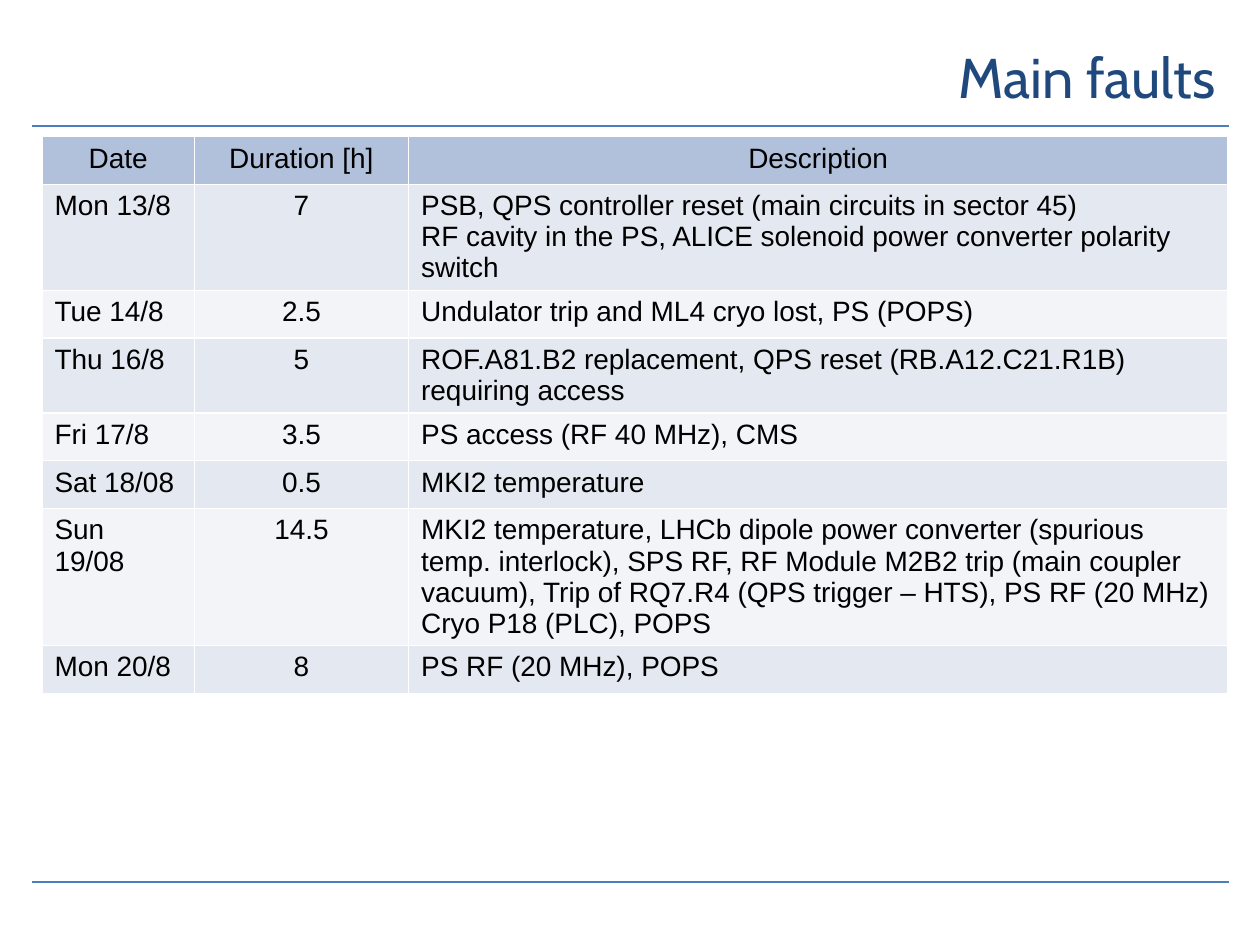
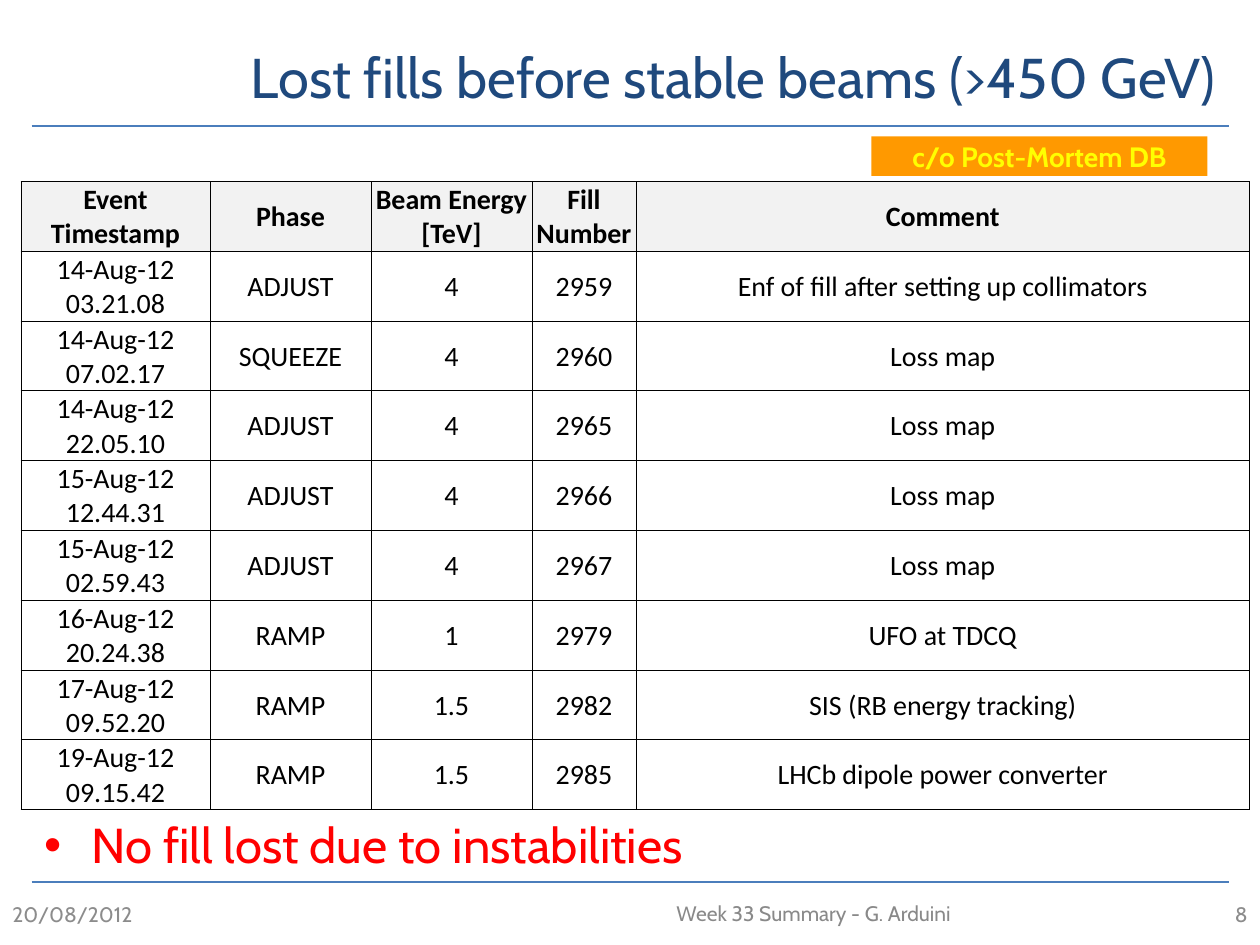
from dataclasses import dataclass
from typing import Any, NamedTuple

from lxml.etree import SubElement
from pptx import Presentation
from pptx.dml.color import RGBColor as Rgb
from pptx.enum.shapes import MSO_CONNECTOR as Connector, MSO_SHAPE as Preset
from pptx.enum.text import MSO_ANCHOR as Anchor, MSO_AUTO_SIZE as AutoSize, PP_ALIGN as Align
from pptx.oxml import parse_xml
from pptx.oxml.ns import nsdecls, qn
from pptx.util import Pt


# Colours, fonts and type sizes
@dataclass(frozen=True)
class Theme:
    title: str = "1F497D"
    rule: str = "4B7EBC"
    ink: str = "000000"
    white: str = "FFFFFF"
    alert: str = "FF0000"
    badge: str = "FF9900"
    badge_text: str = "FFFF00"
    date: str = "8C8C8C"
    footer: str = "898989"
    fault_header: str = "B2C1DB"
    fault_bands: tuple[str, ...] = ("E4E9F1", "F2F4F8")
    fill_header: str = "F2F2F2"
    face: str = "Cabin"
    title_size: float = 32
    list_size: float = 28
    text_size: float = 16
    footer_size: float = 12


THEME = Theme()


class Area(NamedTuple):
    left: float
    top: float
    width: float
    height: float

    def lengths(self) -> list[int]:
        return [Pt(value) for value in self]


@dataclass(frozen=True)
class TextStyle:
    size: float
    color: str
    face: str = THEME.face
    bold: bool = False
    align: Align = Align.LEFT


@dataclass(frozen=True)
class TableStyle:
    face: str
    header_fill: str
    bands: tuple[str, ...]
    border: str
    border_width: float
    aligns: tuple[Align, ...]
    anchor: Anchor
    margins: dict[str, float]
    bold_header: bool = False


class Footer(NamedTuple):
    text: str
    area: Area
    style: TextStyle


TITLE = TextStyle(THEME.title_size, THEME.title, align=Align.RIGHT)
BULLET = TextStyle(THEME.list_size, THEME.alert)
BADGE = TextStyle(THEME.text_size, THEME.badge_text, bold=True, align=Align.CENTER)

FAULT_STYLE = TableStyle(
    "Arial", THEME.fault_header, THEME.fault_bands, THEME.white, 1,
    (Align.LEFT, Align.CENTER, Align.LEFT), Anchor.TOP,
    {"margin_left": 7.2, "margin_right": 7.2, "margin_top": 3.6, "margin_bottom": 3.6},
)
FILL_STYLE = TableStyle(
    "Calibri", THEME.fill_header, (), THEME.ink, 0.5,
    (Align.CENTER,) * 5, Anchor.MIDDLE,
    {"margin_left": 0.72, "margin_right": 0.72, "margin_top": 0.72, "margin_bottom": 0},
    bold_header=True,
)

# Slide content
FAULTS = [
    ("Date", "Duration [h]", "Description"),
    ("Mon 13/8", "7", "PSB, QPS controller reset (main circuits in sector 45)\n"
     "RF cavity in the PS, ALICE solenoid power converter polarity switch"),
    ("Tue 14/8", "2.5", "Undulator trip and ML4 cryo lost, PS (POPS)"),
    ("Thu 16/8", "5", "ROF.A81.B2 replacement, QPS reset (RB.A12.C21.R1B) requiring access"),
    ("Fri 17/8", "3.5", "PS access (RF 40 MHz), CMS"),
    ("Sat 18/08", "0.5", "MKI2 temperature"),
    ("Sun 19/08", "14.5", "MKI2 temperature, LHCb dipole power converter (spurious temp. interlock), "
     "SPS RF, RF Module M2B2 trip (main coupler vacuum), "
     "Trip of RQ7.R4 (QPS trigger – HTS), PS RF (20 MHz)\nCryo P18 (PLC), POPS"),
    ("Mon 20/8", "8", "PS RF (20 MHz), POPS"),
]
LOST_FILLS = [
    ("Event Timestamp", "Phase", "Beam Energy [TeV]", "Fill Number", "Comment"),
    ("14-Aug-12 03.21.08", "ADJUST", "4", "2959", "Enf of fill after setting up collimators"),
    ("14-Aug-12 07.02.17", "SQUEEZE", "4", "2960", "Loss map"),
    ("14-Aug-12 22.05.10", "ADJUST", "4", "2965", "Loss map"),
    ("15-Aug-12 12.44.31", "ADJUST", "4", "2966", "Loss map"),
    ("15-Aug-12 02.59.43", "ADJUST", "4", "2967", "Loss map"),
    ("16-Aug-12 20.24.38", "RAMP", "1", "2979", "UFO at TDCQ"),
    ("17-Aug-12 09.52.20", "RAMP", "1.5", "2982", "SIS (RB energy tracking)"),
    ("19-Aug-12 09.15.42", "RAMP", "1.5", "2985", "LHCb dipole power converter"),
]
FOOTERS = [
    Footer("20/08/2012", Area(0, 516, 168, 13), TextStyle(THEME.footer_size, THEME.date)),
    Footer("Week 33 Summary - G. Arduini", Area(210, 516, 510, 12),
           TextStyle(THEME.footer_size, THEME.footer, align=Align.CENTER)),
    Footer("8", Area(552, 516, 168, 13),
           TextStyle(THEME.footer_size, THEME.date, align=Align.RIGHT)),
]


# Shared drawing functions
def apply_format(target: Any, values: dict[str, Any]) -> None:
    for name, value in values.items():
        setattr(target, name, value)


def write(frame: Any, text: str, style: TextStyle) -> None:
    frame.text = text
    for para in frame.paragraphs:
        apply_format(para, {"alignment": style.align, "space_before": Pt(0)})
        for span in para.runs:
            apply_format(span.font, {"name": style.face, "size": Pt(style.size), "bold": style.bold})
            span.font.color.rgb = Rgb.from_string(style.color)


def write_box(box: Any, text: str, style: TextStyle, anchor: Anchor = Anchor.MIDDLE) -> None:
    apply_format(box.text_frame, {
        "word_wrap": True, "auto_size": AutoSize.NONE, "vertical_anchor": anchor})
    write(box.text_frame, text, style)


def fill_placeholder(box: Any, area: Area, text: str, style: TextStyle, anchor: Anchor) -> None:
    apply_format(box, dict(zip(("left", "top", "width", "height"), area.lengths())))
    write_box(box, text, style, anchor)


def add_page(deck: Any, layout: int, title: str, title_area: Area) -> Any:
    page = deck.slides.add_slide(deck.slide_layouts[layout])
    for height in (72, 504):
        rule = page.shapes.add_connector(
            Connector.STRAIGHT, Pt(18), Pt(height), Pt(702), Pt(height))
        rule.line.color.rgb = Rgb.from_string(THEME.rule)
        rule.line.width = Pt(1.5)
        SubElement(rule._element.spPr, qn("a:effectLst"))
    fill_placeholder(page.shapes.title, title_area, title, TITLE, Anchor.MIDDLE)
    return page


def set_borders(cell: Any, color: str, width: float) -> None:
    properties = cell._tc.get_or_add_tcPr()
    for index, side in enumerate("LRTB"):
        properties.insert(index, parse_xml(
            f'<a:ln{side} {nsdecls("a")} w="{Pt(width)}"><a:solidFill>'
            f'<a:srgbClr val="{color}"/></a:solidFill></a:ln{side}>'))


def add_grid(page: Any, left: float, top: float, widths: list[float], row_height: float,
             rows: list[tuple[str, ...]], style: TableStyle) -> None:
    area = Area(left, top, sum(widths), row_height * len(rows))
    table = page.shapes.add_table(len(rows), len(widths), *area.lengths()).table
    apply_format(table, {"first_row": False, "horz_banding": False})
    for column, width in zip(table.columns, widths):
        column.width = Pt(width)
    for number, texts in enumerate(rows):
        table.rows[number].height = Pt(row_height)
        header = number == 0
        bands = style.bands
        fill = style.header_fill if header else bands[(number - 1) % len(bands)] if bands else None
        for column, text in enumerate(texts):
            cell = table.cell(number, column)
            apply_format(cell, {name: Pt(value) for name, value in style.margins.items()})
            cell.vertical_anchor = style.anchor
            if fill:
                cell.fill.solid()
                cell.fill.fore_color.rgb = Rgb.from_string(fill)
            else:
                cell.fill.background()
            set_borders(cell, style.border, style.border_width)
            write(cell.text_frame, text, TextStyle(
                THEME.text_size, THEME.ink, style.face, header and style.bold_header,
                Align.CENTER if header else style.aligns[column]))


def add_badge(page: Any, text: str, area: Area) -> None:
    badge = page.shapes.add_shape(Preset.RECTANGLE, *area.lengths())
    badge.shadow.inherit = False
    badge.fill.solid()
    badge.fill.fore_color.rgb = Rgb.from_string(THEME.badge)
    badge.line.fill.background()
    write_box(badge, text, BADGE)


# Slides
def build_faults(deck: Any) -> None:
    page = add_page(deck, 5, "Main faults", Area(126, 12, 576, 63))
    add_grid(page, 24, 78, [87, 122.5, 468], 27.3, FAULTS, FAULT_STYLE)


def build_lost_fills(deck: Any) -> None:
    page = add_page(deck, 1, "Lost fills before stable beams (>450 GeV)", Area(60, 12, 642, 63))
    add_grid(page, 12, 103.7, [108, 92, 92, 59.5, 350.5], 39.9, LOST_FILLS, FILL_STYLE)
    fill_placeholder(page.placeholders[1], Area(18, 462, 684, 36),
                     "No fill lost due to instabilities", BULLET, Anchor.TOP)
    for footer in FOOTERS:
        write_box(page.shapes.add_textbox(*footer.area.lengths()), footer.text, footer.style)
    add_badge(page, "c/o Post-Mortem DB", Area(498, 78, 192, 22.5))


def main() -> None:
    deck = Presentation()
    apply_format(deck, {"slide_width": Pt(720), "slide_height": Pt(540)})
    build_faults(deck)
    build_lost_fills(deck)
    deck.save("out.pptx")


if __name__ == "__main__":
    main()
